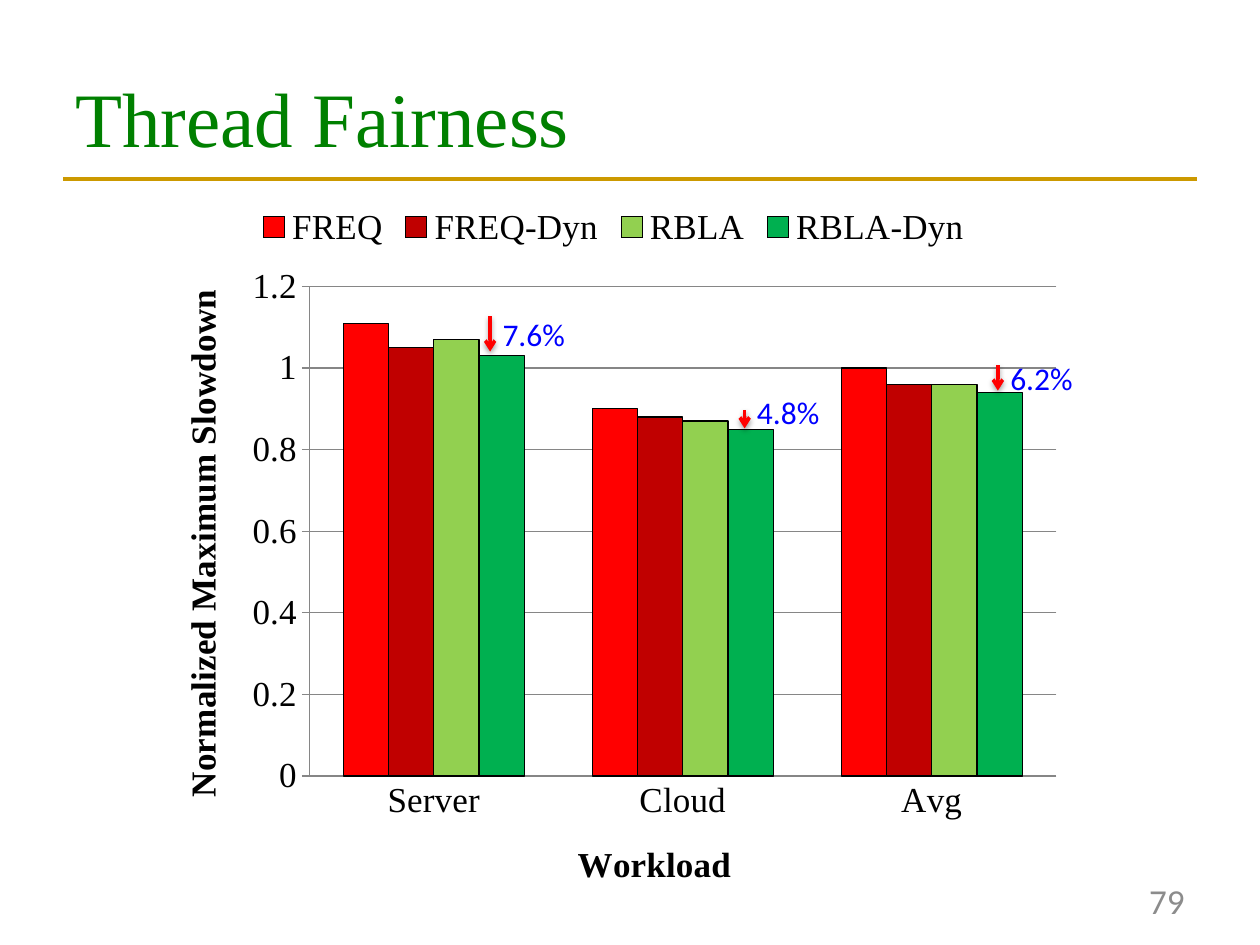
from dataclasses import dataclass

import pptx
import pptx.chart.data
import pptx.dml.color
import pptx.enum.chart
import pptx.enum.shapes
import pptx.enum.text
import pptx.oxml
import pptx.oxml.ns
import pptx.util

Inches = pptx.util.Inches
Pt = pptx.util.Pt
RGBColor = pptx.dml.color.RGBColor
Align = pptx.enum.text.PP_ALIGN
Anchor = pptx.enum.text.MSO_ANCHOR
Tick = pptx.enum.chart.XL_TICK_MARK

BLACK = RGBColor(0x00, 0x00, 0x00)
GREEN = RGBColor(0x00, 0x80, 0x00)
GOLD = RGBColor(0xCC, 0x99, 0x00)
GRAY = RGBColor(0x8C, 0x8C, 0x8C)
AXIS_GRAY = RGBColor(0x86, 0x86, 0x86)
RED = RGBColor(0xFF, 0x00, 0x00)
DARK_RED = RGBColor(0xC0, 0x00, 0x00)
LIME = RGBColor(0x92, 0xD0, 0x50)
EMERALD = RGBColor(0x00, 0xB0, 0x50)
BLUE = RGBColor(0x00, 0x00, 0xFF)

SERIF = "Times New Roman"
SANS = "Calibri"
NAMESPACES = pptx.oxml.ns.nsdecls("a", "c")
SHADOW = (
    '<a:outerShdw blurRad="39370" dist="20320" dir="5400000" rotWithShape="0">'
    '<a:srgbClr val="000000"><a:alpha val="38000"/></a:srgbClr></a:outerShdw>'
)


@dataclass
class Label:
    text: str
    left: float
    top: float
    width: float
    height: float
    size: int
    color: RGBColor
    font: str = SANS
    align: Align = Align.LEFT
    anchor: Anchor = Anchor.TOP
    wrap: bool = True


@dataclass
class Drop:
    """A slowdown reduction: an arrow pointing down and its percentage."""
    text: str
    x: float
    arrow_top: float
    arrow_bottom: float
    label_top: float


@dataclass
class Bars:
    name: str
    values: tuple[float, ...]
    color: RGBColor


LABELS = [
    Label("Thread Fairness", 0.5, 0.3, 9, 1.25, 44, GREEN, SERIF, anchor=Anchor.MIDDLE),
    Label("79", 7.17, 6.95, 2.33, 0.4, 20, GRAY, align=Align.RIGHT, anchor=Anchor.MIDDLE),
]
DROPS = [
    Drop("7.6%", 3.89, 2.51, 2.79, 2.45),
    Drop("4.8%", 5.91, 3.25, 3.4, 3.07),
    Drop("6.2%", 7.92, 2.9, 3.1, 2.8),
]
WORKLOADS = ["Server", "Cloud", "Avg"]
SERIES = [
    Bars("FREQ", (1.11, 0.9, 1), RED),
    Bars("FREQ-Dyn", (1.05, 0.88, 0.96), DARK_RED),
    Bars("RBLA", (1.07, 0.87, 0.96), LIME),
    Bars("RBLA-Dyn", (1.03, 0.85, 0.94), EMERALD),
]
PLOT_AREA = {"x": 0.17, "y": 0.13, "w": 0.81, "h": 0.67}


def apply(target: object, values: dict) -> None:
    for name, value in values.items():
        setattr(target, name, value)


def style_line(line, color: RGBColor, width: float) -> None:
    line.color.rgb = color
    line.width = Pt(width)


def style_font(font, name: str, size: int, color: RGBColor, bold: bool = False) -> None:
    apply(font, {"name": name, "size": Pt(size), "bold": bold})
    font.color.rgb = color


def add_label(page, label: Label) -> None:
    box = page.shapes.add_textbox(
        Inches(label.left), Inches(label.top), Inches(label.width), Inches(label.height))
    apply(box.text_frame, {"word_wrap": label.wrap, "vertical_anchor": label.anchor})
    para = box.text_frame.paragraphs[0]
    para.alignment = label.align
    span = para.add_run()
    span.text = label.text
    style_font(span.font, label.font, label.size, label.color)


def add_line(page, start: tuple, end: tuple, color: RGBColor, width: float, effect: str = ""):
    line = page.shapes.add_connector(
        pptx.enum.shapes.MSO_CONNECTOR.STRAIGHT, *map(Inches, start + end))
    style_line(line.line, color, width)
    line._element.spPr.append(
        pptx.oxml.parse_xml(f"<a:effectLst {NAMESPACES}>{effect}</a:effectLst>"))
    return line


def add_drop(page, drop: Drop) -> None:
    arrow = add_line(
        page, (drop.x, drop.arrow_bottom), (drop.x, drop.arrow_top), RED, 2, SHADOW)
    arrow.line._get_or_add_ln().append(
        pptx.oxml.parse_xml(f'<a:headEnd {NAMESPACES} type="arrow"/>'))
    add_label(page, Label(drop.text, drop.x, drop.label_top, 0.77, 0.4, 18, BLUE, wrap=False))


def style_axis(axis, title: str, tick: Tick) -> None:
    apply(axis, {"has_title": True, "major_tick_mark": tick, "minor_tick_mark": Tick.NONE})
    style_line(axis.format.line, AXIS_GRAY, 0.75)
    span = axis.axis_title.text_frame.paragraphs[0].add_run()
    span.text = title
    style_font(span.font, SERIF, 20, BLACK, bold=True)


def add_slowdown_chart(page) -> None:
    data = pptx.chart.data.CategoryChartData()
    data.categories = WORKLOADS
    for bars in SERIES:
        data.add_series(bars.name, bars.values)
    chart = page.shapes.add_chart(
        pptx.enum.chart.XL_CHART_TYPE.COLUMN_CLUSTERED,
        Inches(1.21), Inches(1.52), Inches(7.32), Inches(5.8), data).chart
    apply(chart, {"has_title": False, "has_legend": True})
    style_font(chart.font, SERIF, 20, BLACK)
    apply(chart.legend, {
        "position": pptx.enum.chart.XL_LEGEND_POSITION.TOP, "include_in_layout": False})

    # Bars
    plot = chart.plots[0]
    apply(plot, {"gap_width": 150, "overlap": 0, "vary_by_categories": False})
    for series, bars in zip(plot.series, SERIES):
        series.format.fill.solid()
        series.format.fill.fore_color.rgb = bars.color
        style_line(series.format.line, BLACK, 0.75)

    # Axes
    style_axis(chart.category_axis, "Workload", Tick.NONE)
    values = chart.value_axis
    style_axis(values, "Normalized Maximum Slowdown", Tick.OUTSIDE)
    apply(values, {"minimum_scale": 0, "maximum_scale": 1.2, "major_unit": 0.2,
                   "has_major_gridlines": True})
    apply(values.tick_labels, {"number_format": "General", "number_format_is_linked": False})
    style_line(values.major_gridlines.format.line, AXIS_GRAY, 0.75)
    body = values.axis_title.text_frame._txBody.find(pptx.oxml.ns.qn("a:bodyPr"))
    body.set("rot", "-5400000")
    body.set("vert", "horz")

    # Fixed plot area
    area = chart._chartSpace.find(".//" + pptx.oxml.ns.qn("c:plotArea"))
    for layout in area.findall(pptx.oxml.ns.qn("c:layout")):
        area.remove(layout)
    modes = "".join(f'<c:{side}Mode val="edge"/>' for side in "xy")
    sizes = "".join(f'<c:{side} val="{value}"/>' for side, value in PLOT_AREA.items())
    area.insert(0, pptx.oxml.parse_xml(
        f'<c:layout {NAMESPACES}><c:manualLayout><c:layoutTarget val="inner"/>'
        f"{modes}{sizes}</c:manualLayout></c:layout>"))


def main() -> None:
    deck = pptx.Presentation()
    apply(deck, {"slide_width": Inches(10), "slide_height": Inches(7.5)})
    page = deck.slides.add_slide(deck.slide_layouts[6])
    add_line(page, (0.5, 1.42), (9.5, 1.42), GOLD, 2.25)
    add_slowdown_chart(page)
    for label in LABELS:
        add_label(page, label)
    for drop in DROPS:
        add_drop(page, drop)
    deck.save("out.pptx")


if __name__ == "__main__":
    main()
